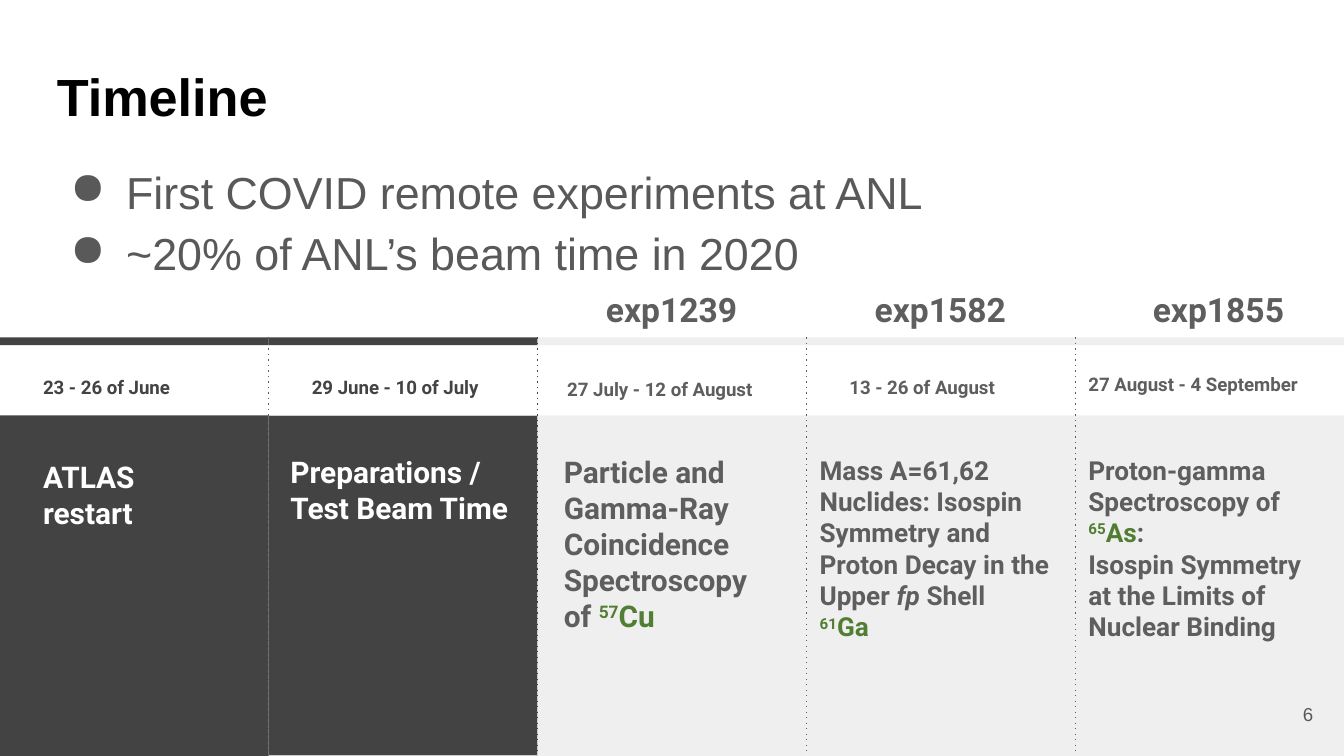
from dataclasses import dataclass

from lxml.etree import SubElement
from pptx import Presentation
from pptx.dml.color import RGBColor
from pptx.enum.shapes import MSO_CONNECTOR as Connector, MSO_SHAPE as Shape
from pptx.enum.text import MSO_ANCHOR as Anchor, PP_ALIGN as Align
from pptx.oxml.ns import qn
from pptx.util import Pt


@dataclass(frozen=True)
class Theme:
    sans: str = "Arial"
    display: str = "Roboto"
    black: str = "000000"
    white: str = "FFFFFF"
    dark: str = "434343"
    pale: str = "EFEFEF"
    gray: str = "5E5E5E"
    body: str = "595959"
    green: str = "517E33"
    outline: str = "CCCCCC"
    title_size: int = 28
    bullet_size: int = 24
    code_size: int = 18
    topic_size: int = 16
    detail_size: int = 14
    small_size: int = 10


THEME = Theme()
TITLE = "Timeline"
BULLETS = ["First COVID remote experiments at ANL", "~20% of ANL’s beam time in 2020"]
PAGE = "6"
SUPER, GREEN, ITALIC = "super", "green", "italic"
COLUMNS = [
    {"date": "23 - 26 of June", "date_box": (16, 192.5, 108, 20),
     "topic": [["ATLAS restart"]], "topic_box": (16, 238.5, 111.5, 63), "dark": True},
    {"date": "29 June - 10 of July", "date_box": (16, 192.5, 128, 20),
     "topic": [["Preparations / Test Beam Time"]], "topic_box": (4.5, 236, 134.5, 63),
     "dark": True, "outlined": True},
    {"date": "27 July - 12 of August", "date_box": (8.8, 193.5, 135, 20),
     "topic": [["Particle and Gamma-Ray Coincidence Spectroscopy of ", ("57", SUPER), ("Cu", GREEN)]],
     "topic_box": (7, 236, 130.5, 132.5), "code": "exp1239", "code_left": 16},
    {"date": "13 - 26 of August", "date_box": (16, 192.5, 124.5, 20),
     "topic": [["Mass A=61,62 Nuclides: Isospin Symmetry and Proton Decay in the Upper ",
                ("fp", ITALIC), " Shell"], [("61", SUPER), ("Ga", GREEN)]],
     "topic_box": (0, 236, 144, 168.5), "code": "exp1582", "code_left": 16,
     "size": THEME.detail_size},
    {"date": "27 August - 4 September", "date_box": (0, 191, 152.5, 40),
     "topic": [["Proton-gamma Spectroscopy of ", ("65", SUPER), ("As", GREEN), ":"],
               ["Isospin Symmetry at the Limits of Nuclear Binding"]],
     "topic_box": (0, 236, 144, 168.5), "code": "exp1855", "code_left": 21,
     "size": THEME.detail_size},
]
WIDTH, HEIGHT = 720, 405
COLUMN_WIDTH = WIDTH / len(COLUMNS)
BAR_TOP, BAR_HEIGHT, PANEL_TOP = 180.75, 4.25, 222.5
INSET = 7.2


def color(value):
    return RGBColor.from_string(value)


def add_text(slide, box, paragraphs, font, size, ink, bold=False, align=None,
             spacing=None, after=None, left_inset=INSET, bullet=False, anchor=Anchor.TOP):
    shape = slide.shapes.add_textbox(*map(Pt, box))
    frame = shape.text_frame
    frame.word_wrap = True
    frame.vertical_anchor = anchor
    frame.margin_left = Pt(left_inset)
    frame.margin_top = frame.margin_right = frame.margin_bottom = Pt(INSET)
    for index, pieces in enumerate(paragraphs):
        paragraph = frame.add_paragraph() if index else frame.paragraphs[0]
        paragraph.alignment = align
        if spacing:
            paragraph.line_spacing = spacing
        if after:
            paragraph.space_after = Pt(after)
        if bullet:
            properties = paragraph._p.get_or_add_pPr()
            properties.set("marL", str(Pt(36)))
            properties.set("indent", str(-Pt(30)))
            bullet_color = SubElement(properties, qn("a:buClr"))
            SubElement(bullet_color, qn("a:srgbClr"), val=ink)
            SubElement(properties, qn("a:buChar"), char="●")
        for piece in pieces:
            text, style = piece if isinstance(piece, tuple) else (piece, None)
            run = paragraph.add_run()
            run.text = text
            run.font.name, run.font.size, run.font.bold = font, Pt(size), bold
            run.font.color.rgb = color(THEME.green if style in (SUPER, GREEN) else ink)
            if style == ITALIC:
                run.font.italic = True
            if style == SUPER:
                run._r.get_or_add_rPr().set("baseline", "30000")


def add_block(slide, box, fill, outline=None):
    shape = slide.shapes.add_shape(Shape.RECTANGLE, *map(Pt, box))
    shape.shadow.inherit = False
    shape.fill.solid()
    shape.fill.fore_color.rgb = color(fill)
    if outline:
        shape.line.color.rgb = color(outline)
        shape.line.width = Pt(0.75)
    else:
        shape.line.fill.background()


def add_divider(slide, x, ink):
    connector = slide.shapes.add_connector(Connector.STRAIGHT, Pt(x), Pt(BAR_TOP), Pt(x), Pt(404))
    connector.line.color.rgb = color(ink)
    connector.line.width = Pt(0.75)
    properties = connector._element.spPr
    SubElement(properties.find(qn("a:ln")), qn("a:prstDash"), val="dot")
    SubElement(properties, qn("a:effectLst"))


def add_column(slide, index, column):
    left = index * COLUMN_WIDTH
    dark = column.get("dark", False)
    fill = THEME.dark if dark else THEME.pale
    outline = THEME.outline if column.get("outlined") else None
    add_block(slide, (left, PANEL_TOP, COLUMN_WIDTH, HEIGHT - PANEL_TOP), fill, outline)
    add_block(slide, (left, BAR_TOP, COLUMN_WIDTH, BAR_HEIGHT), fill)
    if index < len(COLUMNS) - 1:
        add_divider(slide, left + COLUMN_WIDTH, THEME.dark if outline else THEME.gray)
    offset, *rest = column["date_box"]
    add_text(slide, (left + offset, *rest), [[column["date"]]], THEME.display, THEME.small_size,
             THEME.dark if dark else THEME.gray, bold=True, spacing=1.15, after=16)
    offset, *rest = column["topic_box"]
    add_text(slide, (left + offset, *rest), column["topic"], THEME.display,
             column.get("size", THEME.topic_size), THEME.white if dark else THEME.gray, bold=True)
    if "code" in column:
        add_text(slide, (left + column["code_left"], 147.5, 111.5, 34), [[column["code"]]],
                 THEME.display, THEME.code_size, THEME.gray, bold=True, align=Align.CENTER)


def main():
    """Build the experiment timeline slide."""
    presentation = Presentation()
    presentation.slide_width, presentation.slide_height = Pt(WIDTH), Pt(HEIGHT)
    slide = presentation.slides.add_slide(presentation.slide_layouts[6])
    add_text(slide, (24.5, 76.5, 671, 62.5), [[line] for line in BULLETS], THEME.sans,
             THEME.bullet_size, THEME.body, spacing=1.15, bullet=True)
    for index, column in reversed(list(enumerate(COLUMNS))):
        add_column(slide, index, column)
    add_text(slide, (0, 27.5, WIDTH, 48), [[TITLE]], THEME.sans, THEME.title_size,
             THEME.black, bold=True, left_inset=30.5)
    add_text(slide, (667.5, 367, 43, 31), [[PAGE]], THEME.sans, THEME.small_size,
             THEME.body, align=Align.RIGHT, anchor=Anchor.MIDDLE)
    presentation.save("out.pptx")


if __name__ == "__main__":
    main()
